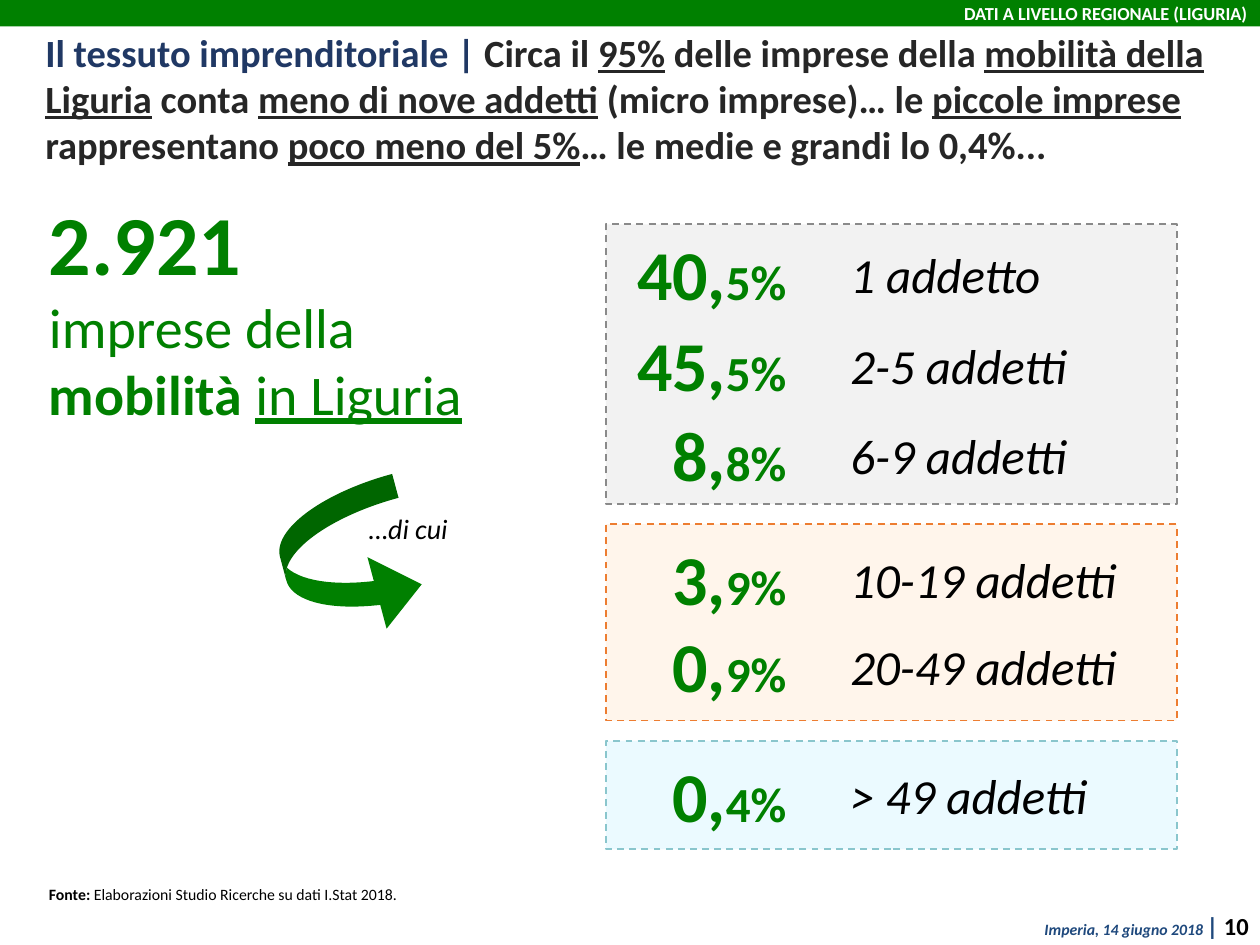
"""Build the slide on Ligurian mobility companies by number of employees."""
from dataclasses import dataclass
from typing import Any

import pptx
import pptx.dml.color
import pptx.enum.dml
import pptx.enum.shapes
import pptx.enum.text
import pptx.util

Inches = pptx.util.Inches
Pt = pptx.util.Pt
RGBColor = pptx.dml.color.RGBColor
ALIGN = pptx.enum.text.PP_ALIGN
ANCHOR = pptx.enum.text.MSO_ANCHOR
AUTO_SIZE = pptx.enum.text.MSO_AUTO_SIZE
SHAPE = pptx.enum.shapes.MSO_SHAPE

GREEN = RGBColor(0x00, 0x80, 0x00)
NAVY = RGBColor(0x20, 0x38, 0x64)
BLUE = RGBColor(0x1F, 0x49, 0x7D)
CHARCOAL = RGBColor(0x26, 0x26, 0x26)
BLACK = RGBColor(0x00, 0x00, 0x00)
WHITE = RGBColor(0xFF, 0xFF, 0xFF)
GREY_FILL = RGBColor(0xF2, 0xF2, 0xF2)
GREY_LINE = RGBColor(0x8A, 0x8A, 0x8A)
ORANGE_FILL = RGBColor(0xFF, 0xF5, 0xEB)
ORANGE_LINE = RGBColor(0xED, 0x7D, 0x31)
CYAN_FILL = RGBColor(0xEB, 0xFA, 0xFF)
CYAN_LINE = RGBColor(0x8A, 0xC6, 0xCD)

VALUE_RIGHT = 6.34
LABEL_LEFT = 6.65
LABEL_OFFSET = 0.11


@dataclass(frozen=True)
class Box:
    left: float
    top: float
    width: float
    height: float

    def lengths(self) -> list[int]:
        return [Inches(value) for value in (self.left, self.top, self.width, self.height)]


@dataclass(frozen=True)
class TextRun:
    text: str
    size: float
    color: RGBColor
    bold: bool = False
    italic: bool = False
    underline: bool = False


@dataclass(frozen=True)
class Panel:
    box: Box
    fill: RGBColor
    line: RGBColor


@dataclass(frozen=True)
class SizeClass:
    top: float
    whole: str
    decimal: str
    value_width: float
    label: str
    label_width: float


PANELS = [
    Panel(Box(4.81, 5.88, 4.53, 0.86), CYAN_FILL, CYAN_LINE),
    Panel(Box(4.81, 4.16, 4.53, 1.56), ORANGE_FILL, ORANGE_LINE),
    Panel(Box(4.81, 1.78, 4.53, 2.22), GREY_FILL, GREY_LINE),
]
SIZE_CLASSES = [
    SizeClass(1.78, "40,", "5%", 1.4, "1 addetto", 1.74),
    SizeClass(2.5, "45,", "5%", 1.4, "2-5 addetti", 1.95),
    SizeClass(3.22, "8,", "8%", 1.12, "6-9 addetti", 1.95),
    SizeClass(4.2, "3,", "9%", 1.12, "10-19 addetti", 2.35),
    SizeClass(4.89, "0,", "9%", 1.12, "20-49 addetti", 2.35),
    SizeClass(5.92, "0,", "4%", 1.12, "> 49 addetti", 2.12),
]
HEADLINE = [
    ("Circa il ", False),
    ("95%", True),
    (" delle imprese della ", False),
    ("mobilità della Liguria", True),
    (" conta ", False),
    ("meno di nove addetti", True),
    (" (micro imprese)… le ", False),
    ("piccole imprese", True),
    (" rappresentano ", False),
    ("poco meno del 5%", True),
    ("… le medie e grandi lo 0,4%...", False),
]


def set_attributes(target: Any, values: dict[str, Any]) -> None:
    for name, value in values.items():
        setattr(target, name, value)


def write_text(shape: Any, paragraphs: list[list[TextRun]], frame_format: dict[str, Any],
               **paragraph_format: Any) -> None:
    frame = shape.text_frame
    set_attributes(frame, frame_format)
    for index, runs in enumerate(paragraphs):
        paragraph = frame.add_paragraph() if index else frame.paragraphs[0]
        set_attributes(paragraph, {"alignment": ALIGN.LEFT, **paragraph_format})
        for text_run in runs:
            run = paragraph.add_run()
            run.text = text_run.text
            set_attributes(run.font, {
                "name": "Calibri", "size": Pt(text_run.size), "bold": text_run.bold,
                "italic": text_run.italic, "underline": text_run.underline,
            })
            run.font.color.rgb = text_run.color


def add_text(slide: Any, box: Box, paragraphs: list[list[TextRun]], wrap: bool = True,
             **paragraph_format: Any) -> None:
    shape = slide.shapes.add_textbox(*box.lengths())
    frame_format = {"word_wrap": wrap, "auto_size": AUTO_SIZE.SHAPE_TO_FIT_TEXT}
    write_text(shape, paragraphs, frame_format, **paragraph_format)


def add_filled_shape(slide: Any, kind: Any, box: Box, color: RGBColor) -> Any:
    shape = slide.shapes.add_shape(kind, *box.lengths())
    shape.shadow.inherit = False
    shape.fill.solid()
    shape.fill.fore_color.rgb = color
    shape.line.fill.background()
    return shape


def add_panel(slide: Any, panel: Panel) -> None:
    shape = add_filled_shape(slide, SHAPE.RECTANGLE, panel.box, panel.fill)
    shape.line.color.rgb = panel.line
    set_attributes(shape.line, {"width": Pt(1), "dash_style": pptx.enum.dml.MSO_LINE.DASH})


def add_size_class(slide: Any, row: SizeClass) -> None:
    value_box = Box(VALUE_RIGHT - row.value_width, row.top, row.value_width, 0.77)
    value = [TextRun(row.whole, 40, GREEN, bold=True), TextRun(row.decimal, 28, GREEN, bold=True)]
    add_text(slide, value_box, [value], wrap=False, alignment=ALIGN.RIGHT)
    label_box = Box(LABEL_LEFT, row.top + LABEL_OFFSET, row.label_width, 0.57)
    add_text(slide, label_box, [[TextRun(row.label, 28, BLACK, italic=True)]], wrap=False)


def format_title(title: Any) -> None:
    position = zip(("left", "top", "width", "height"), Box(0.29, 0.19, 9.71, 1.19).lengths())
    set_attributes(title, dict(position))
    runs = [TextRun("Il tessuto imprenditoriale | ", 22, NAVY, bold=True)]
    runs += [TextRun(text, 22, CHARCOAL, bold=True, underline=underline)
             for text, underline in HEADLINE]
    write_text(title, [runs], {
        "word_wrap": True, "auto_size": AUTO_SIZE.NONE, "vertical_anchor": ANCHOR.TOP,
        "margin_left": Inches(0.07), "margin_right": Inches(0.07),
        "margin_top": Inches(0.04), "margin_bottom": Inches(0.04),
    }, space_before=Pt(0))


def main() -> None:
    presentation = pptx.Presentation()
    set_attributes(presentation, {"slide_width": Inches(10), "slide_height": Inches(7.5)})
    slide = presentation.slides.add_slide(presentation.slide_layouts[5])
    format_title(slide.shapes.title)

    add_text(slide, Box(3.08, 7.18, 6.93, 0.33), [[
        TextRun("Imperia, 14 giugno 2018 ", 9, BLUE, bold=True, italic=True),
        TextRun("| ", 14, BLUE, bold=True),
        TextRun("10", 14, BLACK, bold=True),
    ]], alignment=ALIGN.RIGHT)

    for panel in PANELS:
        add_panel(slide, panel)
    for row in SIZE_CLASSES:
        add_size_class(slide, row)

    add_text(slide, Box(0.29, 6.96, 9.48, 0.27), [[
        TextRun("Fonte: ", 9, BLACK, bold=True),
        TextRun("Elaborazioni Studio Ricerche su dati I.Stat 2018.", 9, BLACK),
    ]], alignment=ALIGN.JUSTIFY, line_spacing=1.1)

    add_text(slide, Box(2.83, 4.01, 1.01, 0.37), [[TextRun("…di cui", 16, BLACK, italic=True)]])
    arrow = add_filled_shape(slide, SHAPE.CURVED_UP_ARROW, Box(2.17, 3.96, 1.2, 1.03), GREEN)
    arrow.rotation = 75
    for index, value in enumerate((0.19, 0.57, 0.35)):
        arrow.adjustments[index] = value

    add_text(slide, Box(0.29, 1.47, 3.71, 1.99), [
        [TextRun("2.921", 48, GREEN, bold=True)],
        [TextRun("imprese della ", 32, GREEN), TextRun("mobilità ", 32, GREEN, bold=True),
         TextRun("in Liguria", 32, GREEN, underline=True)],
    ])

    banner = add_filled_shape(slide, SHAPE.RECTANGLE, Box(0, 0, 10, 0.21), GREEN)
    banner_run = TextRun("DATI A LIVELLO REGIONALE (LIGURIA)", 10.5, WHITE, bold=True)
    write_text(banner, [[banner_run]], {"vertical_anchor": ANCHOR.MIDDLE}, alignment=ALIGN.RIGHT)

    presentation.save("out.pptx")


if __name__ == "__main__":
    main()
